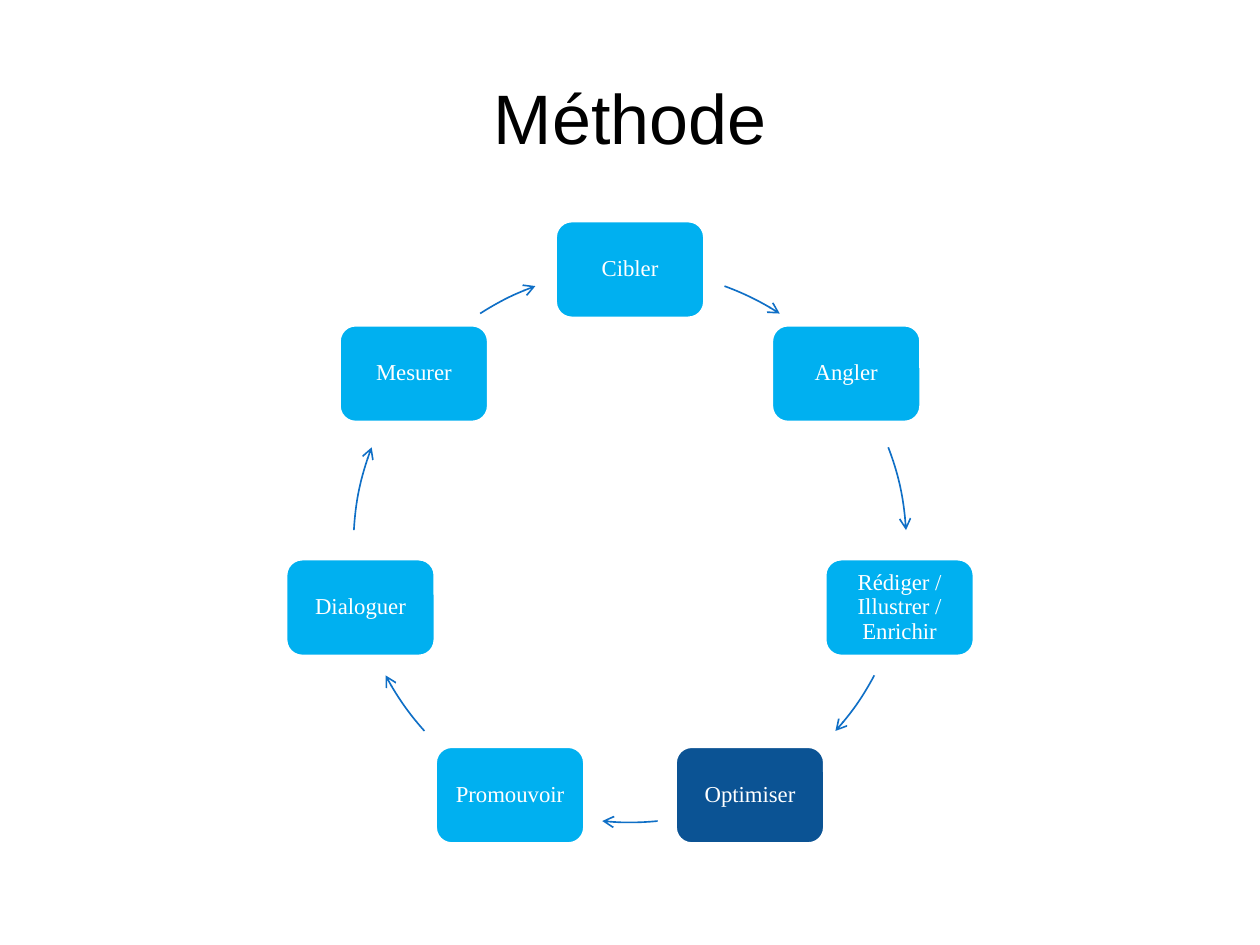
from dataclasses import dataclass
from math import cos, radians, sin

from lxml.etree import SubElement
from pptx import Presentation
from pptx.dml.color import RGBColor
from pptx.enum.shapes import MSO_SHAPE
from pptx.enum.text import MSO_ANCHOR, PP_ALIGN
from pptx.oxml.ns import qn
from pptx.util import Pt


@dataclass(frozen=True)
class Theme:
    title_font: str = "Arial"
    step_font: str = "Times New Roman"
    title_size: float = 40
    step_size: float = 13
    black: str = "000000"
    white: str = "FFFFFF"
    step: str = "00B0F0"
    current: str = "0B5394"
    arrow: str = "0F6FC6"


THEME = Theme()
STEPS = ["Cibler", "Angler", "Rédiger / Illustrer / Enrichir", "Optimiser",
         "Promouvoir", "Dialoguer", "Mesurer"]
CURRENT = "Optimiser"
STEP_W, STEP_H = 85, 55.3

# Arrow spans in degrees clockwise from the top; the left half mirrors the right
RIGHT_SPANS = [(20, 32.8), (69.1, 86.7), (117.9, 132)]
BOTTOM_SPAN = (174.25, 185.75)
LEFT_SPANS = [(360 - end, 360 - start) for start, end in reversed(RIGHT_SPANS)]
SPANS = [*RIGHT_SPANS, BOTTOM_SPAN, *LEFT_SPANS]


def rgb(color):
    return RGBColor.from_string(color)


def write(sp, text, *, font, size, color, spacing=1.0, inset=3.6):
    """Write one centred paragraph into a shape."""
    tf = sp.text_frame
    tf.word_wrap = True
    tf.vertical_anchor = MSO_ANCHOR.MIDDLE
    tf.margin_left = tf.margin_right = Pt(inset)
    tf.margin_top = tf.margin_bottom = Pt(3.6)
    p = tf.paragraphs[0]
    p.alignment = PP_ALIGN.CENTER
    p.line_spacing = spacing
    r = p.add_run()
    r.text = text
    r.font.name = font
    r.font.size = Pt(size)
    r.font.color.rgb = rgb(color)


def add_title(s, text, x, y, w, h):
    sp = s.shapes.add_textbox(Pt(x), Pt(y), Pt(w), Pt(h))
    write(sp, text, font=THEME.title_font, size=THEME.title_size,
          color=THEME.black, inset=7.2)


def add_step(s, text, cx, cy):
    """Place a rounded box centred on a point."""
    sp = s.shapes.add_shape(MSO_SHAPE.ROUNDED_RECTANGLE, Pt(cx - STEP_W / 2),
                            Pt(cy - STEP_H / 2), Pt(STEP_W), Pt(STEP_H))
    sp.shadow.inherit = False
    sp.fill.solid()
    sp.fill.fore_color.rgb = rgb(THEME.current if text == CURRENT else THEME.step)
    sp.line.color.rgb = rgb(THEME.white)
    sp.line.width = Pt(1.5)
    write(sp, text, font=THEME.step_font, size=THEME.step_size,
          color=THEME.white, spacing=0.9)


def add_arc_arrow(s, x, y, size, start, end):
    """Draw a clockwise arc with an open arrowhead on the circle in the box."""
    sp = s.shapes.add_shape(MSO_SHAPE.ARC, Pt(x), Pt(y), Pt(size), Pt(size))
    sp.shadow.inherit = False
    sp.fill.background()
    # Arc angles count from the right, in 60000ths of a degree over 100000
    for i, angle in enumerate((start, end)):
        sp.adjustments[i] = (angle - 90) % 360 * 0.6
    sp.line.color.rgb = rgb(THEME.arrow)
    sp.line.width = Pt(0.94)
    SubElement(sp.line._get_or_add_ln(), qn("a:tailEnd"), type="arrow")


def add_cycle(s, steps, x, y, size):
    """Spread the steps evenly on the circle in the box, with arrows between."""
    radius = size / 2
    for i, (text, span) in enumerate(zip(steps, SPANS)):
        angle = radians(360 * i / len(steps))
        add_step(s, text, x + radius + radius * sin(angle),
                 y + radius - radius * cos(angle))
        add_arc_arrow(s, x, y, size, *span)


def main():
    prs = Presentation()
    prs.slide_width, prs.slide_height = Pt(720), Pt(540)
    s = prs.slides.add_slide(prs.slide_layouts[6])

    # Title
    add_title(s, "Méthode", 36, 21.6, 648, 90)

    # Cycle of steps
    add_cycle(s, STEPS, 202, 154, 316)

    prs.save("out.pptx")


if __name__ == "__main__":
    main()
